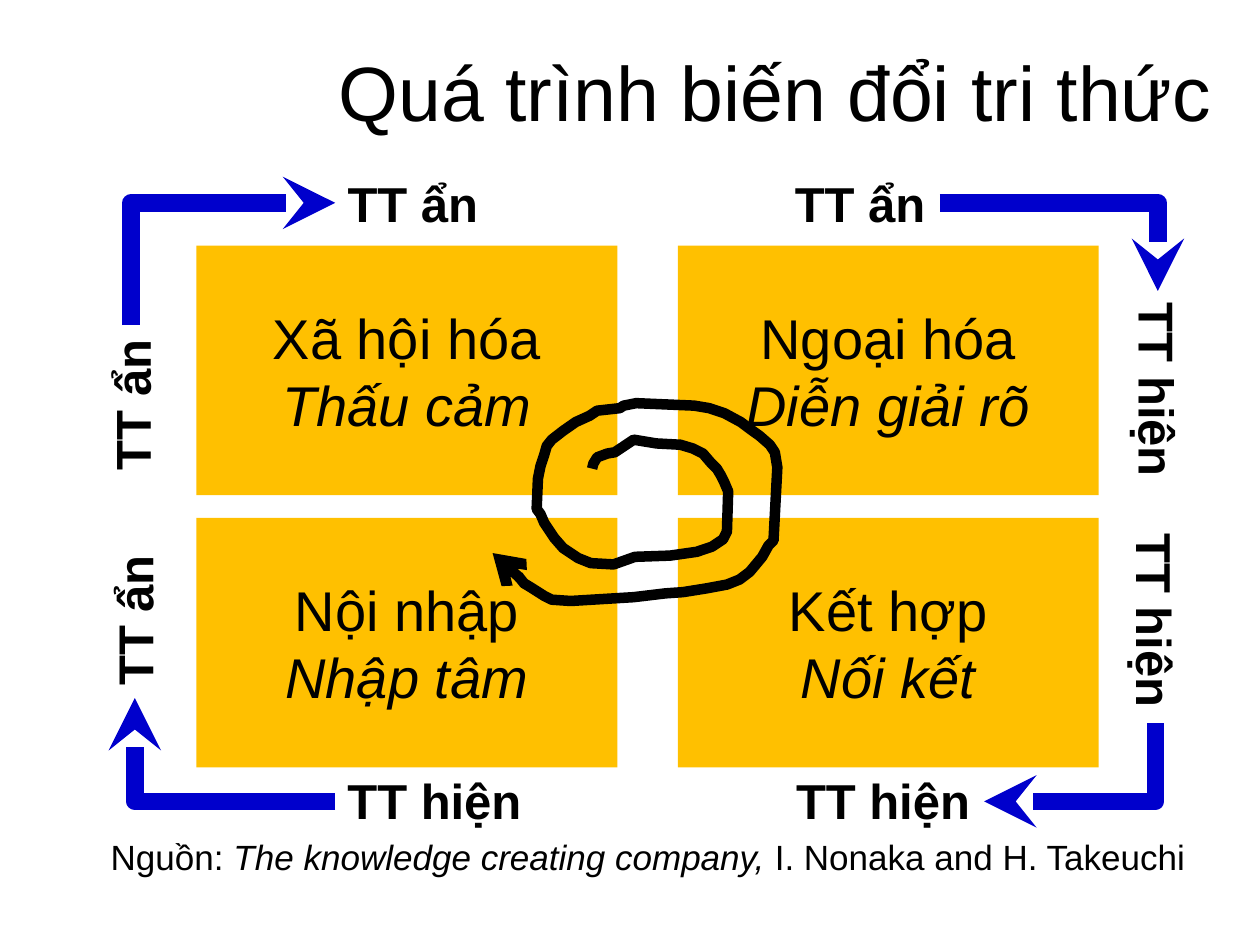
import pptx
import pptx.dml.color
import pptx.enum.shapes
import pptx.enum.text
import pptx.oxml.ns
import pptx.util
from lxml import etree

Inches = pptx.util.Inches
Pt = pptx.util.Pt
RGBColor = pptx.dml.color.RGBColor
Alignment = pptx.enum.text.PP_ALIGN
Anchor = pptx.enum.text.MSO_ANCHOR
qn = pptx.oxml.ns.qn

BLACK = RGBColor(0x00, 0x00, 0x00)
AMBER = RGBColor(0xFF, 0xC0, 0x00)
BLUE = RGBColor(0x00, 0x00, 0xCC)

SPIRAL_POINTS = [
    (79, 52), (80, 48), (83, 43), (91, 40), (97, 39), (103, 35), (112, 29),
    (130, 32), (149, 33), (159, 36), (167, 40), (173, 47), (178, 52), (181, 57),
    (184, 63), (187, 70), (186, 102), (183, 108), (174, 114), (162, 118),
    (141, 121), (113, 122), (96, 128), (78, 127), (68, 123), (56, 115),
    (49, 107), (41, 95), (38, 88), (35, 84), (36, 60), (38, 50), (41, 41),
    (43, 34), (47, 29), (56, 22), (66, 15), (77, 10), (83, 6), (101, 4),
    (104, 2), (114, 0), (160, 2), (172, 4), (184, 8), (197, 15), (205, 21),
    (212, 26), (220, 33), (224, 39), (226, 51), (223, 109), (219, 113),
    (214, 122), (209, 128), (204, 134), (196, 140), (186, 144), (170, 147),
    (151, 150), (137, 151), (112, 154), (62, 157), (47, 156), (41, 153),
    (30, 146), (25, 143), (21, 138), (16, 132), (11, 128), (3, 123), (0, 119),
]


def format_run(run, size, bold=False, italic=False):
    run.font.name = "Arial"
    run.font.size = Pt(size)
    run.font.bold = bold
    run.font.italic = italic
    run.font.color.rgb = BLACK


def style_arrow(shape, color, width, head):
    shape.line.color.rgb = color
    shape.line.width = Pt(width)
    line = shape.line._get_or_add_ln()
    etree.SubElement(line, qn("a:round"))
    etree.SubElement(line, qn("a:tailEnd"), type=head)


def add_text(slide, left, top, width, height, parts, size, bold=False, rotation=0):
    box = slide.shapes.add_textbox(Inches(left), Inches(top), Inches(width), Inches(height))
    box.rotation = rotation
    box.text_frame.word_wrap = False
    paragraph = box.text_frame.paragraphs[0]
    for text, italic in parts:
        run = paragraph.add_run()
        run.text = text
        format_run(run, size, bold, italic)
    return box


def add_title(slide, left, top, width, height):
    box = add_text(slide, left, top, width, height, [("Quá trình biến đổi tri thức", False)], 44)
    box.text_frame.word_wrap = True
    box.text_frame.vertical_anchor = Anchor.MIDDLE
    box.text_frame.paragraphs[0].alignment = Alignment.CENTER


def add_quadrants(slide, left, top, width, height):
    cell_width, cell_height = 3.34, 1.98
    rows = [
        [("Xã hội hóa", "Thấu cảm"), ("Ngoại hóa", "Diễn giải rõ")],
        [("Nội nhập", "Nhập tâm"), ("Kết hợp", "Nối kết")],
    ]
    for row, cells in enumerate(rows):
        for column, lines in enumerate(cells):
            shape = slide.shapes.add_shape(
                pptx.enum.shapes.MSO_SHAPE.RECTANGLE,
                Inches(left + column * (width - cell_width)),
                Inches(top + row * (height - cell_height)),
                Inches(cell_width), Inches(cell_height))
            shape.shadow.inherit = False
            shape.fill.solid()
            shape.fill.fore_color.rgb = AMBER
            shape.line.fill.background()
            frame = shape.text_frame
            frame.text = "\n".join(lines)
            frame.word_wrap = False
            frame.vertical_anchor = Anchor.MIDDLE
            for paragraph, italic in zip(frame.paragraphs, (False, True)):
                paragraph.alignment = Alignment.CENTER
                format_run(paragraph.runs[0], 32, italic=italic)


def add_labels(slide, left, top):
    tacit, explicit = ("TT ẩn", 1.25), ("TT hiện", 1.6)
    labels = [
        (tacit, 2.24, 0, 0), (tacit, 5.79, 0, 0),
        (explicit, 2.24, 4.74, 0), (explicit, 5.8, 4.74, 0),
        (tacit, 0, 1.59, 270), (tacit, 0.02, 3.3, 270),
        (explicit, 7.97, 1.49, 90), (explicit, 7.95, 3.32, 90),
    ]
    for (text, width), x, y, rotation in labels:
        box = add_text(slide, left + x, top + y, width, 0.57, [(text, False)], 28, True, rotation)
        box.text_frame.auto_size = pptx.enum.text.MSO_AUTO_SIZE.SHAPE_TO_FIT_TEXT


def add_corner_arrow(slide, left, top, width, height, rotation):
    if rotation % 180:
        left, top = left + (width - height) / 2, top + (height - width) / 2
        width, height = height, width
    connector = slide.shapes.add_connector(
        pptx.enum.shapes.MSO_CONNECTOR.ELBOW,
        Inches(left), Inches(top), Inches(left + width), Inches(top + height))
    style_arrow(connector, BLUE, 10, "stealth")
    properties = connector._element.spPr
    properties.find(qn("a:prstGeom")).set("prst", "bentConnector2")
    properties.find(qn("a:xfrm")).set("rot", str(rotation * 60000))
    etree.SubElement(properties, qn("a:effectLst"))


def add_spiral(slide, left, top):
    builder = slide.shapes.build_freeform(*SPIRAL_POINTS[0], scale=Inches(0.01))
    builder.add_line_segments(SPIRAL_POINTS[1:], close=False)
    shape = builder.convert_to_shape(Inches(left), Inches(top))
    shape.shadow.inherit = False
    shape.fill.background()
    style_arrow(shape, BLACK, 6, "arrow")


def add_source(slide, left, top, width, height):
    parts = [("Nguồn: ", False), ("The knowledge creating company, ", True),
             ("I. Nonaka and H. Takeuchi", False)]
    add_text(slide, left, top, width, height, parts, 20)


def main():
    presentation = pptx.Presentation()
    presentation.slide_width = Inches(10)
    presentation.slide_height = Inches(7.5)
    slide = presentation.slides.add_slide(presentation.slide_layouts[6])
    add_title(slide, 2, 0.25, 8.31, 0.94)
    add_quadrants(slide, 1.56, 1.95, 7.16, 4.14)
    add_labels(slide, 0.42, 1.33)
    add_source(slide, 0.78, 6.58, 8.79, 0.43)
    add_corner_arrow(slide, 1.04, 1.61, 1.62, 0.97, 270)
    add_corner_arrow(slide, 7.46, 1.61, 1.73, 0.7, 0)
    add_corner_arrow(slide, 7.81, 5.74, 1.36, 0.62, 90)
    add_corner_arrow(slide, 1.07, 5.54, 1.59, 0.82, 180)
    add_spiral(slide, 3.91, 3.2)
    presentation.save("out.pptx")


if __name__ == "__main__":
    main()
